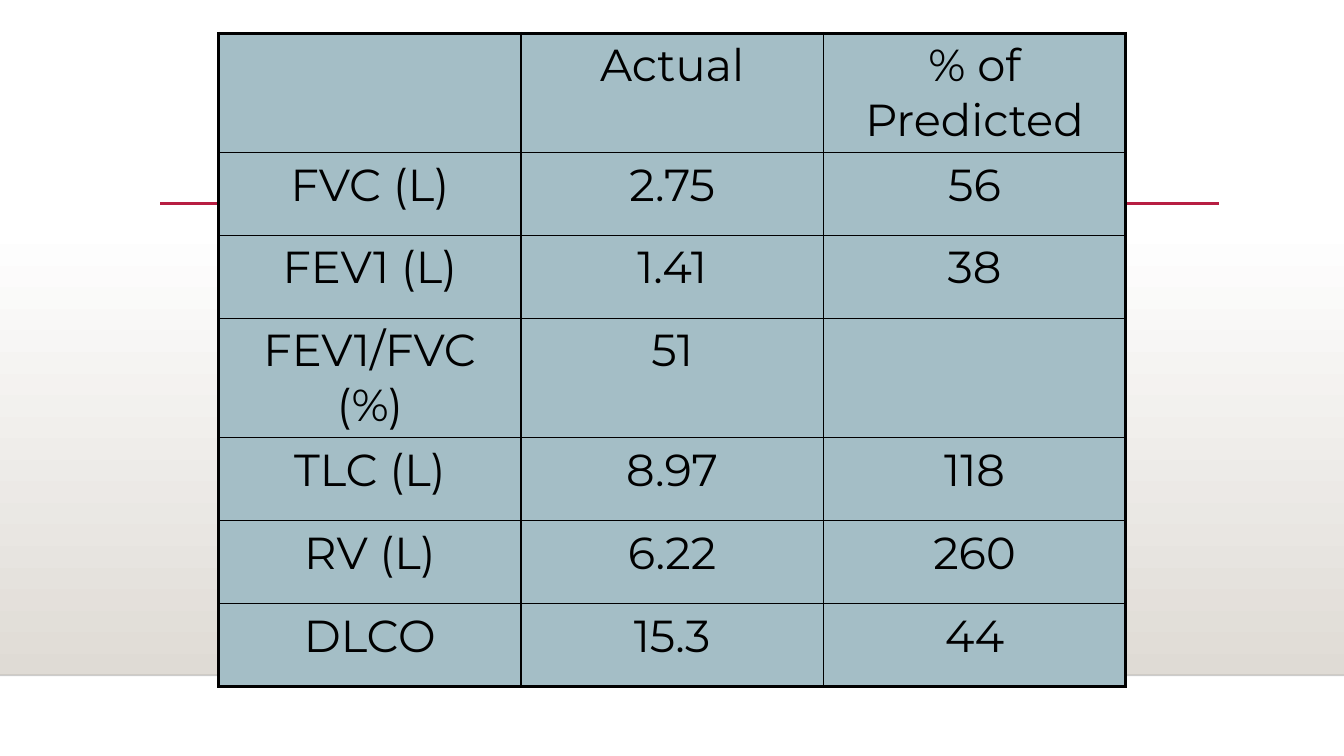
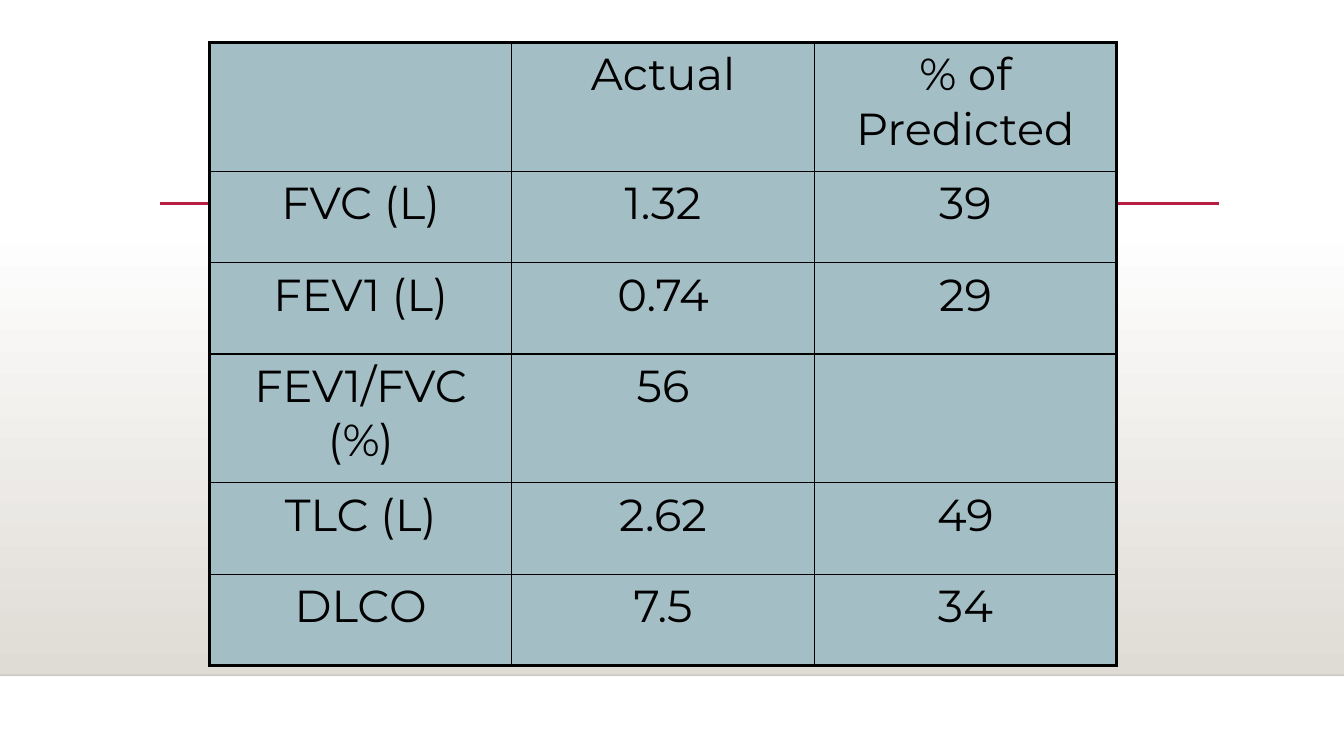
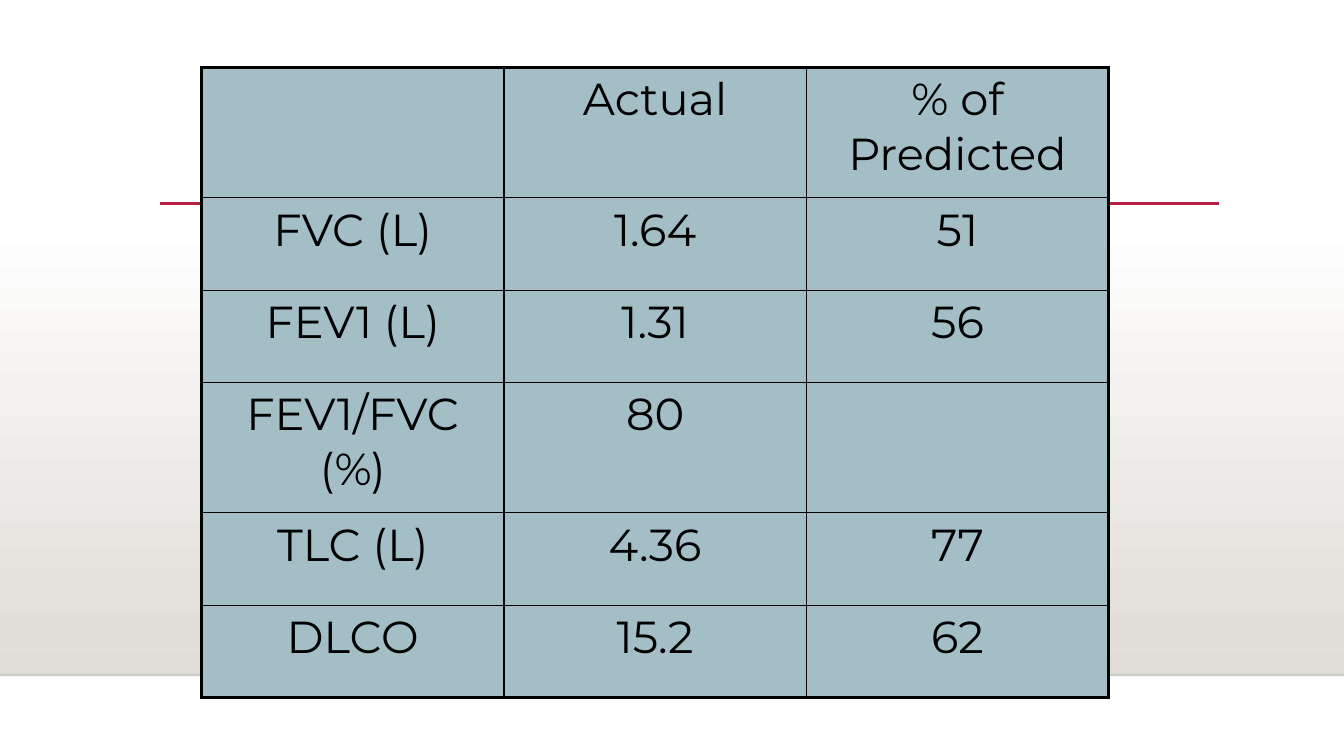
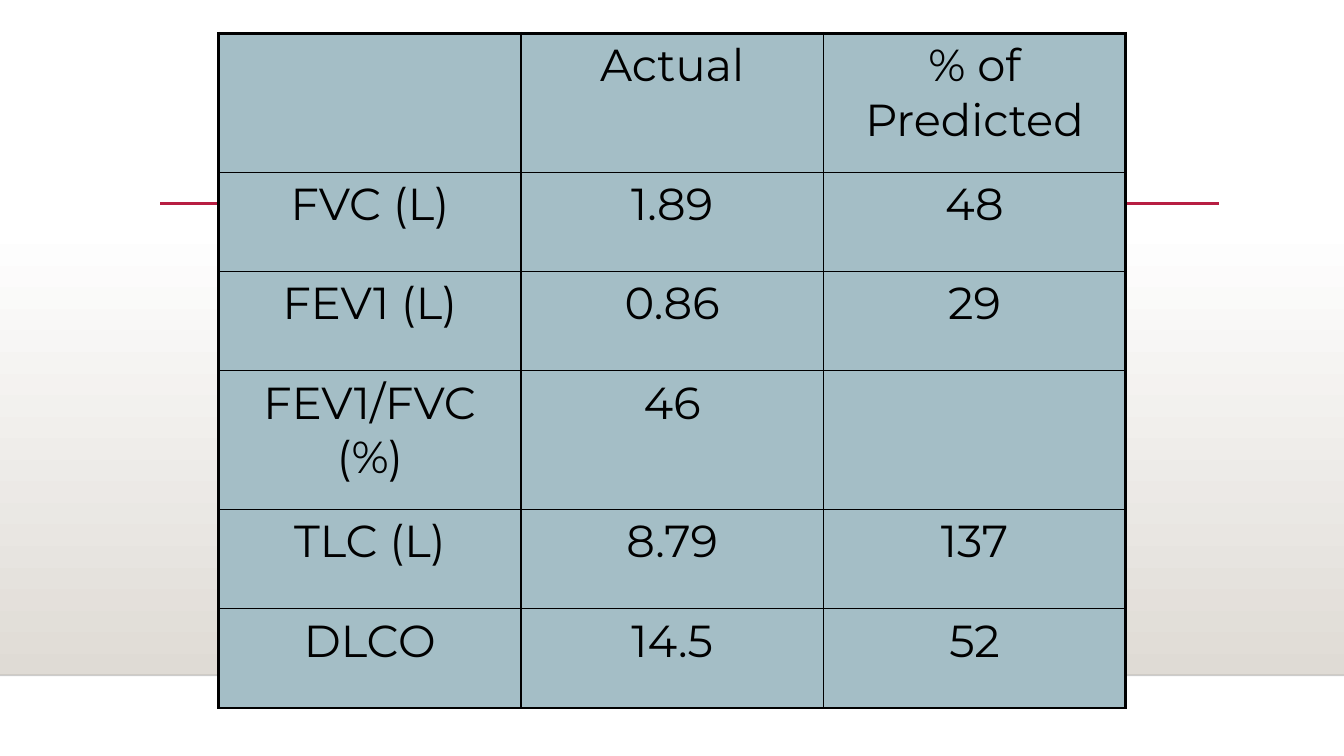
from lxml.etree import SubElement as Sub
from pptx import Presentation
from pptx.dml.color import RGBColor
from pptx.enum.shapes import MSO_CONNECTOR as Link, MSO_SHAPE as Shape
from pptx.enum.text import PP_ALIGN as Align
from pptx.oxml.ns import qn
from pptx.util import Cm, Pt

# Colours and type
WHITE = RGBColor(0xFF, 0xFF, 0xFF)
BLACK = RGBColor(0x00, 0x00, 0x00)
SAND = RGBColor(0xDF, 0xDB, 0xD5)
RED = RGBColor(0xB7, 0x1E, 0x42)
TEAL = RGBColor(0xA4, 0xBE, 0xC6)
FONT = "Montserrat"
SIZE = Pt(32)

# Measures in centimetres, borders in points
WIDE, HIGH = 33.87, 19.05
BAND_TOP, BAND_END = 5.61, 17.02
COL = 7.62
THICK, THIN = 2.25, 1

HEAD = ("", "Actual", "% of Predicted")

# Left, top, tall row, short row, then the results
TESTS = [
    (5.51, 0.84, 2.97, 2.09, [
        ("FVC (L)", "2.75", "56"), ("FEV1 (L)", "1.41", "38"),
        ("FEV1/FVC (%)", "51", ""), ("TLC (L)", "8.97", "118"),
        ("RV (L)", "6.22", "260"), ("DLCO", "15.3", "44")]),
    (5.28, 1.07, 3.25, 2.3, [
        ("FVC (L)", "1.32", "39"), ("FEV1 (L)", "0.74", "29"),
        ("FEV1/FVC (%)", "56", ""), ("TLC (L)", "2.62", "49"),
        ("DLCO", "7.5", "34")]),
    (5.08, 1.7, 3.28, 2.33, [
        ("FVC (L)", "1.64", "51"), ("FEV1 (L)", "1.31", "56"),
        ("FEV1/FVC (%)", "80", ""), ("TLC (L)", "4.36", "77"),
        ("DLCO", "15.2", "62")]),
    (5.51, 0.84, 3.5, 2.5, [
        ("FVC (L)", "1.89", "48"), ("FEV1 (L)", "0.86", "29"),
        ("FEV1/FVC (%)", "46", ""), ("TLC (L)", "8.79", "137"),
        ("DLCO", "14.5", "52")]),
]


def add_rule(slide, left, right, y, color, width, alpha=None):
    """Draw a level line, see-through if alpha (percent) is given."""
    rule = slide.shapes.add_connector(
        Link.STRAIGHT, Cm(left), Cm(y), Cm(right), Cm(y))
    rule.line.color.rgb = color
    rule.line.width = Pt(width)
    props = rule._element.spPr
    if alpha:
        tint = props.find(".//" + qn("a:srgbClr"))
        Sub(tint, qn("a:alpha"), val=str(alpha * 1000))
    Sub(props, qn("a:effectLst"))


def add_base(slide):
    """Draw the fading band and the two rules that all slides share."""
    band = slide.shapes.add_shape(
        Shape.RECTANGLE, 0, Cm(BAND_TOP), Cm(WIDE), Cm(BAND_END - BAND_TOP))
    band.shadow.inherit = False
    band.line.fill.background()
    band.fill.gradient()
    band.fill.gradient_angle = 270
    for stop, color in zip(band.fill.gradient_stops, (WHITE, SAND)):
        stop.color.rgb = color
    add_rule(slide, 0, WIDE, BAND_END, BLACK, 1, alpha=20)
    add_rule(slide, 4.04, 30.73, 5.13, RED, 2.5)


def set_edge(cell, side, width):
    """Give one side of a cell a black border."""
    edge = Sub(cell._tc.get_or_add_tcPr(), qn("a:ln" + side),
               w=str(Pt(width)))
    fill = Sub(edge, qn("a:solidFill"))
    Sub(fill, qn("a:srgbClr"), val=str(BLACK))


def fill_cell(cell, text):
    cell.fill.solid()
    cell.fill.fore_color.rgb = TEAL
    cell.text_frame.text = text
    para = cell.text_frame.paragraphs[0]
    para.alignment = Align.CENTER
    for run in para.runs:
        run.font.name = FONT
        run.font.size = SIZE
        run.font.color.rgb = BLACK


def add_grid(slide, left, top, tall, short, rows):
    """Add a results table with a thick frame and thin inner lines."""
    rows = [HEAD] + rows
    # Rows whose text takes two lines are tall
    highs = [tall if row[0] in ("", "FEV1/FVC (%)") else short
             for row in rows]
    table = slide.shapes.add_table(
        len(rows), len(HEAD), Cm(left), Cm(top),
        Cm(COL * len(HEAD)), Cm(sum(highs))).table
    table.first_row = table.horz_banding = False
    for col in table.columns:
        col.width = Cm(COL)
    last_row, last_col = len(rows) - 1, len(HEAD) - 1
    for r, row in enumerate(rows):
        table.rows[r].height = Cm(highs[r])
        for c, text in enumerate(row):
            cell = table.cell(r, c)
            outer = {"L": c == 0, "R": c == last_col,
                     "T": r == 0, "B": r == last_row}
            for side, rim in outer.items():
                set_edge(cell, side, THICK if rim else THIN)
            fill_cell(cell, text)


def main():
    deck = Presentation()
    deck.slide_width, deck.slide_height = Cm(WIDE), Cm(HIGH)
    for test in TESTS:
        slide = deck.slides.add_slide(deck.slide_layouts[6])
        add_base(slide)
        add_grid(slide, *test)
    deck.save("out.pptx")


if __name__ == "__main__":
    main()
